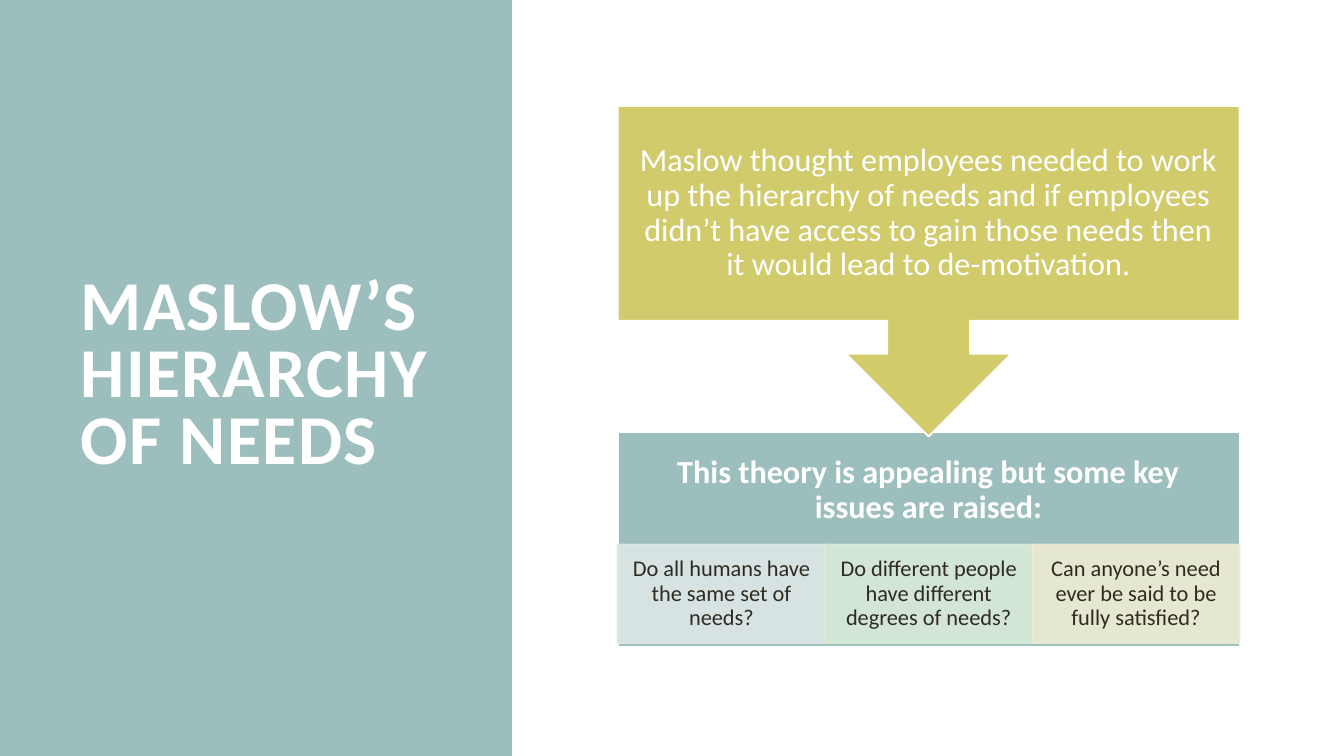
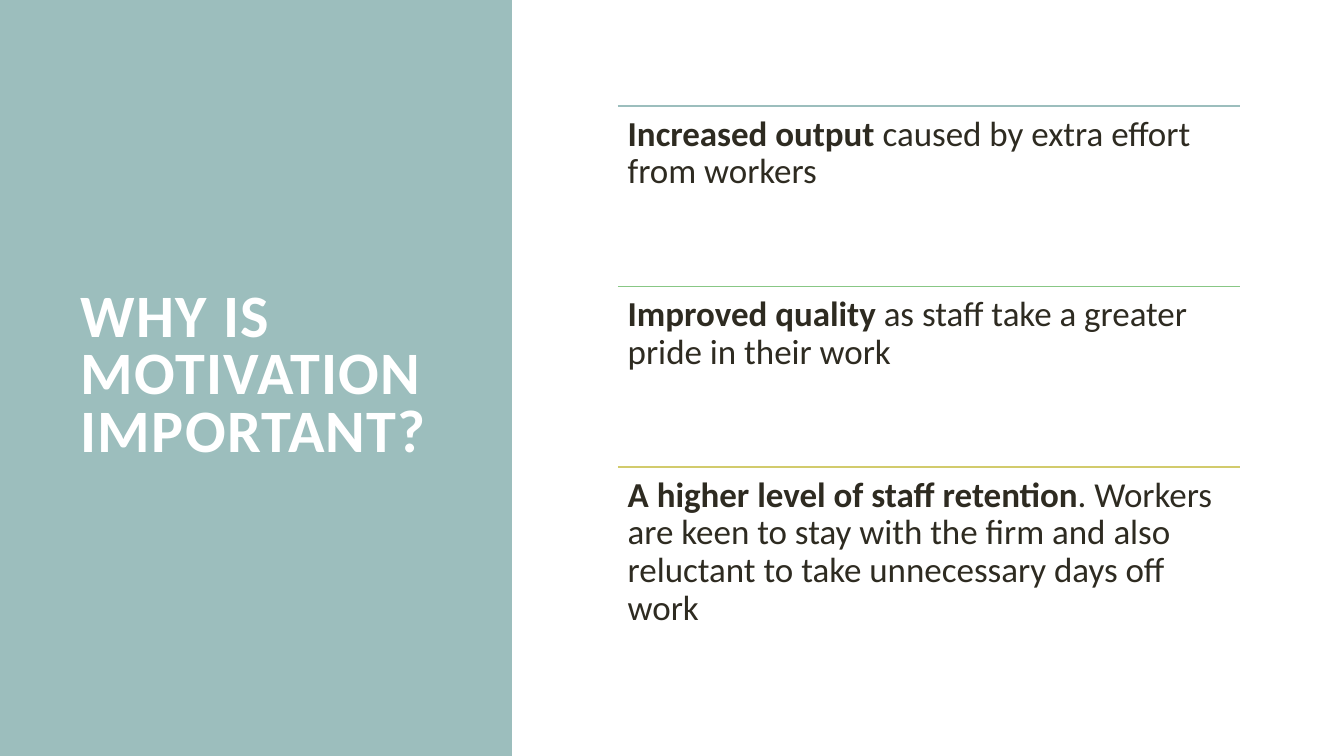
from lxml import etree
from pptx import Presentation
from pptx.dml.color import RGBColor
from pptx.enum.shapes import MSO_CONNECTOR, MSO_SHAPE
from pptx.enum.text import MSO_ANCHOR, MSO_AUTO_SIZE, PP_ALIGN
from pptx.oxml.ns import qn
from pptx.util import Cm, Pt

WHITE = RGBColor(0xFF, 0xFF, 0xFF)
INK = RGBColor(0x2E, 0x2B, 0x21)
TEAL = RGBColor(0x9C, 0xBE, 0xBD)
GREEN = RGBColor(0x88, 0xC7, 0x85)
OLIVE = RGBColor(0xD2, 0xCB, 0x6C)
PALE_TEAL = RGBColor(0xDE, 0xE8, 0xE8)
PALE_GREEN = RGBColor(0xDA, 0xEB, 0xD9)
PALE_OLIVE = RGBColor(0xEE, 0xEC, 0xD4)

FONT = "Calibri"
LEFT, TOP, WIDTH = Cm(15.57), Cm(2.67), Cm(15.67)
PAD = Cm(0.46)


def write(shape, text, lead="", size=23, color=WHITE, bold=False, align=PP_ALIGN.CENTER,
          anchor=MSO_ANCHOR.MIDDLE, spacing=0.9, margins=(PAD, PAD, PAD, PAD), tracking=0):
    frame = shape.text_frame
    frame.word_wrap = True
    frame.auto_size = MSO_AUTO_SIZE.NONE
    frame.vertical_anchor = anchor
    frame.margin_left, frame.margin_top, frame.margin_right, frame.margin_bottom = margins
    para = frame.paragraphs[0]
    para.alignment = align
    para.line_spacing = spacing
    for words, heavy in ((lead, True), (text, bold)):
        if words:
            span = para.add_run()
            span.text = words
            span.font.name = FONT
            span.font.size = Pt(size)
            span.font.bold = heavy
            span.font.color.rgb = color
            if tracking:
                span.font._element.set("spc", str(tracking))


def add_block(page, kind, left, top, width, height, fill, line=None, alpha=None):
    block = page.shapes.add_shape(kind, left, top, width, height)
    block.shadow.inherit = False
    block.fill.solid()
    block.fill.fore_color.rgb = fill
    if line is None:
        block.line.fill.background()
    else:
        block.line.color.rgb = line
        block.line.width = Pt(1.25)
    if alpha:
        for color in block.element.spPr.iter(qn("a:srgbClr")):
            etree.SubElement(color, qn("a:alpha")).set("val", str(alpha * 1000))
    return block


deck = Presentation()
deck.slide_width, deck.slide_height = Cm(33.87), Cm(19.05)

pages = []
for heading, size in (("MASLOW’S HIERARCHY OF NEEDS", 50), ("WHY IS MOTIVATION IMPORTANT?", 43)):
    page = deck.slides.add_slide(deck.slide_layouts[5])
    band = add_block(page, MSO_SHAPE.RECTANGLE, 0, 0, Cm(12.9), deck.slide_height, TEAL)
    title = page.shapes.title
    band.element.addnext(title.element)
    title.left, title.top, title.width, title.height = Cm(1.78), Cm(1.78), Cm(9.5), Cm(15.47)
    write(title, heading, size=size, bold=True, align=PP_ALIGN.LEFT, spacing=0.8, tracking=100,
          margins=(Cm(0.25), Cm(0.13), Cm(0.25), Cm(0.13)))
    pages.append(page)
hierarchy, motivation = pages

card_height = Cm(2.49)
issues = add_block(hierarchy, MSO_SHAPE.RECTANGLE, LEFT, Cm(10.9), WIDTH, Cm(5.41), TEAL, WHITE)
write(issues, "This theory is appealing but some key issues are raised:", bold=True,
      margins=(PAD, PAD, PAD, PAD + card_height))

questions = (
    ("Do all humans have the same set of needs?", PALE_TEAL),
    ("Do different people have different degrees of needs?", PALE_GREEN),
    ("Can anyone’s need ever be said to be fully satisfied?", PALE_OLIVE),
)
card_width = WIDTH // len(questions)
for index, (question, tint) in enumerate(questions):
    card = add_block(hierarchy, MSO_SHAPE.RECTANGLE, LEFT + index * card_width, Cm(13.72),
                     card_width, card_height, tint, tint, alpha=90)
    write(card, question, size=16, color=INK, margins=(Cm(0.3), Cm(0.05), Cm(0.3), Cm(0.05)))

callout = add_block(hierarchy, MSO_SHAPE.DOWN_ARROW_CALLOUT, LEFT, TOP, WIDTH, Cm(8.33), OLIVE, WHITE)
write(callout, "Maslow thought employees needed to work up the hierarchy of needs and if employees "
               "didn’t have access to gain those needs then it would lead to de-motivation.")

reasons = (
    ("Increased output", " caused by extra effort from workers", TEAL),
    ("Improved quality", " as staff take a greater pride in their work", GREEN),
    ("A higher level of staff retention", ". Workers are keen to stay with the firm and also "
     "reluctant to take unnecessary days off work", OLIVE),
)
row_height = Cm(4.55)
for index, (lead, detail, color) in enumerate(reasons):
    top = TOP + index * row_height
    rule = motivation.shapes.add_connector(MSO_CONNECTOR.STRAIGHT, LEFT, top, LEFT + WIDTH, top)
    rule.line.color.rgb = color
    rule.line.width = Pt(1.25)
    etree.SubElement(rule.element.spPr, qn("a:effectLst"))
    box = motivation.shapes.add_textbox(LEFT, top, WIDTH, row_height)
    write(box, detail, lead=lead, size=25, color=INK, align=PP_ALIGN.LEFT,
          anchor=MSO_ANCHOR.TOP, margins=(Cm(0.25),) * 4)

deck.save("out.pptx")
